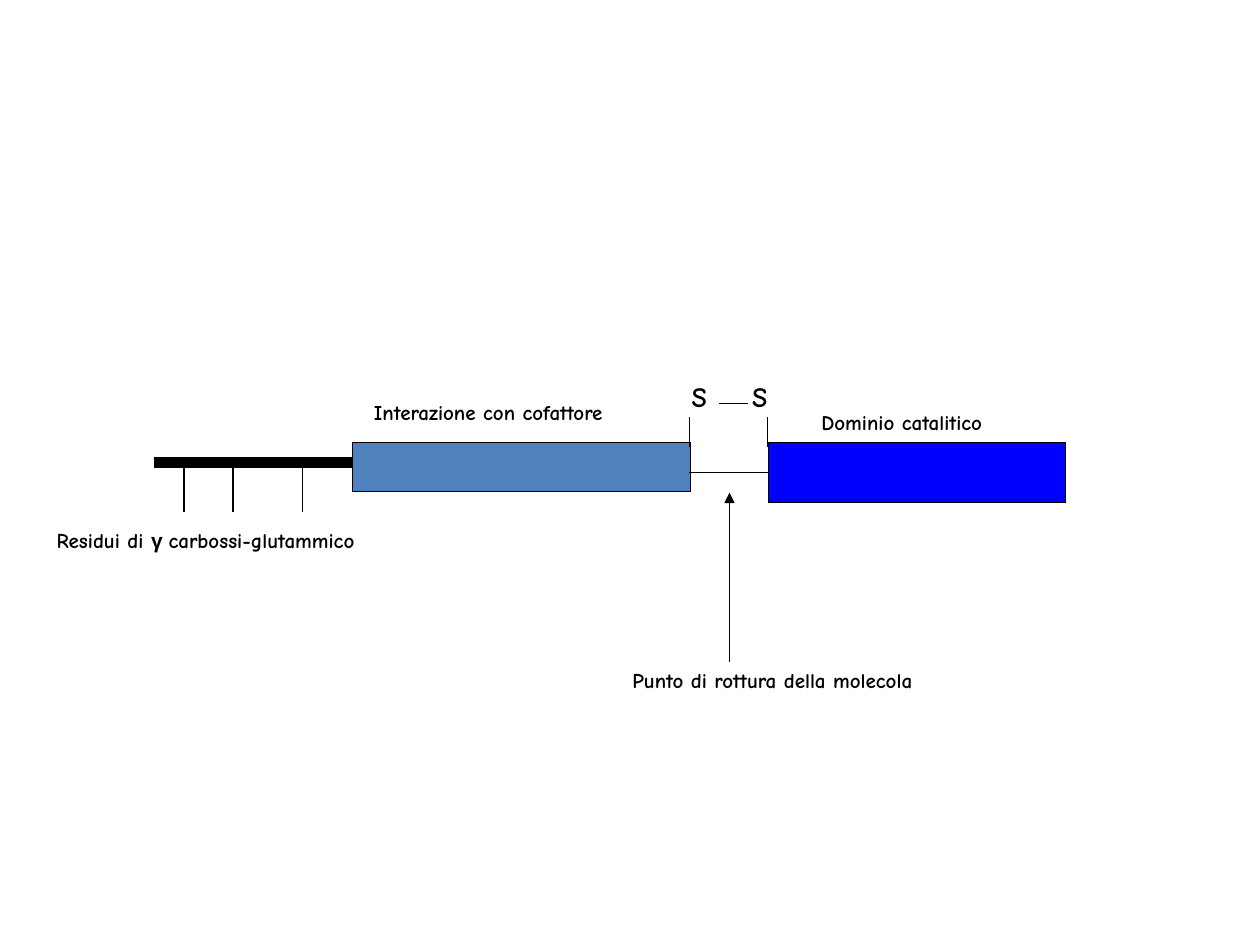
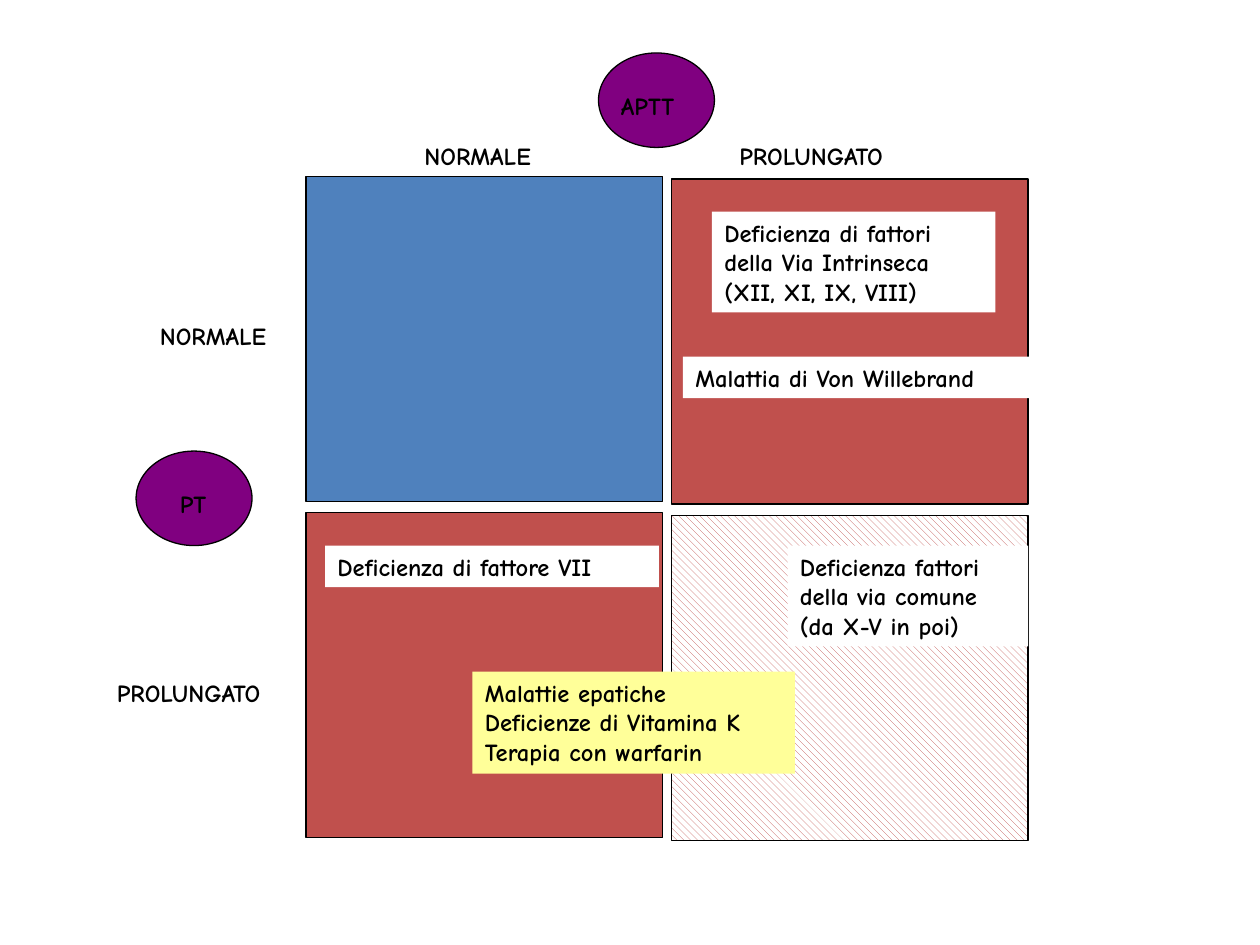
"""Build two coagulation slides: a factor's domains and the PT/APTT chart."""
import dataclasses

import pptx
import pptx.dml.color
import pptx.enum.dml
import pptx.enum.shapes
import pptx.oxml
import pptx.oxml.ns
import pptx.util

Inches = pptx.util.Inches
Shapes = pptx.enum.shapes.MSO_SHAPE


@dataclasses.dataclass(frozen=True)
class Theme:
    """Colours, fonts and sizes shared by the slides."""
    black: str = "000000"
    white: str = "FFFFFF"
    blue: str = "4F81BD"
    catalytic: str = "0000FF"
    red: str = "C0504D"
    purple: str = "800080"
    yellow: str = "FFFF99"
    font: str = "Comic Neue"
    symbol_font: str = "Arial"
    caption: int = 12
    label: int = 14
    atom: int = 16
    thin: float = 0.75
    thick: float = 6


THEME = Theme()


def colour(code):
    """Turn a hex code into a colour."""
    return pptx.dml.color.RGBColor.from_string(code)


def add_span(para, text, *, size=THEME.caption, font=THEME.font):
    """Append formatted bold text to a paragraph."""
    span = para.add_run()
    span.text = text
    span.font.name = font
    span.font.size = pptx.util.Pt(size)
    span.font.bold = True
    span.font.color.rgb = colour(THEME.black)


def add_text(page, text, left, top, width, height, *, size=THEME.label, fill=None):
    """Add a text box with one paragraph per line and an optional fill."""
    box = page.shapes.add_textbox(Inches(left), Inches(top), Inches(width), Inches(height))
    box.text_frame.word_wrap = True
    if fill:
        box.fill.solid()
        box.fill.fore_color.rgb = colour(fill)
    for index, line in enumerate(text.split("\n")):
        para = box.text_frame.add_paragraph() if index else box.text_frame.paragraphs[0]
        add_span(para, line, size=size)
    return box


def add_block(page, kind, left, top, width, height, fill, *, hatched=False):
    """Add an outlined preset shape, solid or hatched."""
    block = page.shapes.add_shape(
        kind, Inches(left), Inches(top), Inches(width), Inches(height))
    block.shadow.inherit = False
    if hatched:
        block.fill.patterned()
        block.fill.pattern = pptx.enum.dml.MSO_PATTERN.WIDE_DOWNWARD_DIAGONAL
        block.fill.back_color.rgb = colour(THEME.white)
    else:
        block.fill.solid()
    block.fill.fore_color.rgb = colour(fill)
    block.line.color.rgb = colour(THEME.black)
    block.line.width = pptx.util.Pt(THEME.thin)
    return block


def add_line(page, start, end, *, width=THEME.thin, arrow=False):
    """Add a straight black connector, with an arrowhead at its end if asked."""
    line = page.shapes.add_connector(
        pptx.enum.shapes.MSO_CONNECTOR.STRAIGHT, *map(Inches, start + end))
    line.line.color.rgb = colour(THEME.black)
    line.line.width = pptx.util.Pt(width)
    if arrow:
        outline = line.line._get_or_add_ln()
        outline.append(pptx.oxml.parse_xml(
            f'<a:tailEnd {pptx.oxml.ns.nsdecls("a")} type="triangle"/>'))
    line._element.spPr.append(pptx.oxml.parse_xml(
        f'<a:effectLst {pptx.oxml.ns.nsdecls("a")}/>'))
    return line


def build_domains(page):
    """Draw the protein chain with its domains and cleavage point."""
    chain_y = 3.67
    add_line(page, (1.22, chain_y), (2.8, chain_y), width=THEME.thick)
    for residue_x in (1.46, 1.85, 2.4):
        add_line(page, (residue_x, chain_y), (residue_x, 4.06))
    residues = add_text(page, "Residui di ", 0.35, 4.14, 2.79, 0.3, size=THEME.caption)
    para = residues.text_frame.paragraphs[0]
    add_span(para, "γ ", font=THEME.symbol_font)
    add_span(para, "carbossi-glutammico")

    add_block(page, Shapes.RECTANGLE, 2.8, 3.51, 2.68, 0.39, THEME.blue)
    catalytic = add_block(page, Shapes.RECTANGLE, 6.1, 3.51, 2.36, 0.48, THEME.catalytic)
    bridge = add_line(page, (5.47, 3.75), (6.1, 3.75))
    bridge.end_connect(catalytic, 1)

    for sulphur_x, text_left in ((5.47, 5.39), (6.09, 5.87)):
        add_line(page, (sulphur_x, 3.55), (sulphur_x, 3.31))
        add_text(page, "S", text_left, 2.96, 0.45, 0.37, size=THEME.atom)
    add_line(page, (5.71, 3.2), (5.94, 3.2))
    add_line(page, (5.79, 5.25), (5.79, 3.91), arrow=True)

    for text, left, top, width in (
            ("Interazione con cofattore", 2.87, 3.12, 2.3),
            ("Dominio catalitico", 6.42, 3.2, 1.61),
            ("Punto di rottura della molecola", 4.92, 5.25, 2.68)):
        add_text(page, text, left, top, width, 0.3, size=THEME.caption)


def build_matrix(page):
    """Draw the two-by-two chart of PT and APTT results."""
    for left, top in ((1.08, 3.58), (4.75, 0.42)):
        add_block(page, Shapes.OVAL, left, top, 0.92, 0.75, THEME.purple)

    quadrants = ((THEME.blue, THEME.red), (THEME.red, THEME.red))
    for row, fills in enumerate(quadrants):
        for column, fill in enumerate(fills):
            add_block(page, Shapes.RECTANGLE,
                      2.43 + 2.9 * column, 1.4 + 2.67 * row + 0.02 * column,
                      2.83, 2.58, fill, hatched=bool(row and column))

    for text, left, top, width in (
            ("APTT", 4.83, 0.67, 0.72),
            ("NORMALE", 3.27, 1.07, 1.18),
            ("PROLUNGATO", 5.77, 1.07, 1.56),
            ("PT", 1.33, 3.83, 0.44),
            ("NORMALE", 1.17, 2.5, 1.18),
            ("PROLUNGATO", 0.83, 5.33, 1.56)):
        add_text(page, text, left, top, width, 0.33)

    for text, left, top, width, height, fill in (
            ("Deficienza fattori\ndella via comune\n(da X-V in poi)",
             6.25, 4.33, 1.91, 0.8, THEME.white),
            ("Deficienza di fattori\ndella Via Intrinseca\n(XII, XI, IX, VIII)",
             5.65, 1.68, 2.25, 0.8, THEME.white),
            ("Deficienza di fattore VII", 2.58, 4.33, 2.65, 0.33, THEME.white),
            ("Malattie epatiche\nDeficienze di Vitamina K\nTerapia con warfarin",
             3.75, 5.33, 2.56, 0.81, THEME.yellow),
            ("Malattia di Von Willebrand", 5.42, 2.83, 2.75, 0.33, THEME.white)):
        add_text(page, text, left, top, width, height, fill=fill)


def main():
    """Build and save the deck."""
    deck = pptx.Presentation()
    deck.slide_width = Inches(10)
    deck.slide_height = Inches(7.5)
    blank = deck.slide_layouts[6]
    for build in (build_domains, build_matrix):
        build(deck.slides.add_slide(blank))
    deck.save("out.pptx")


if __name__ == "__main__":
    main()
